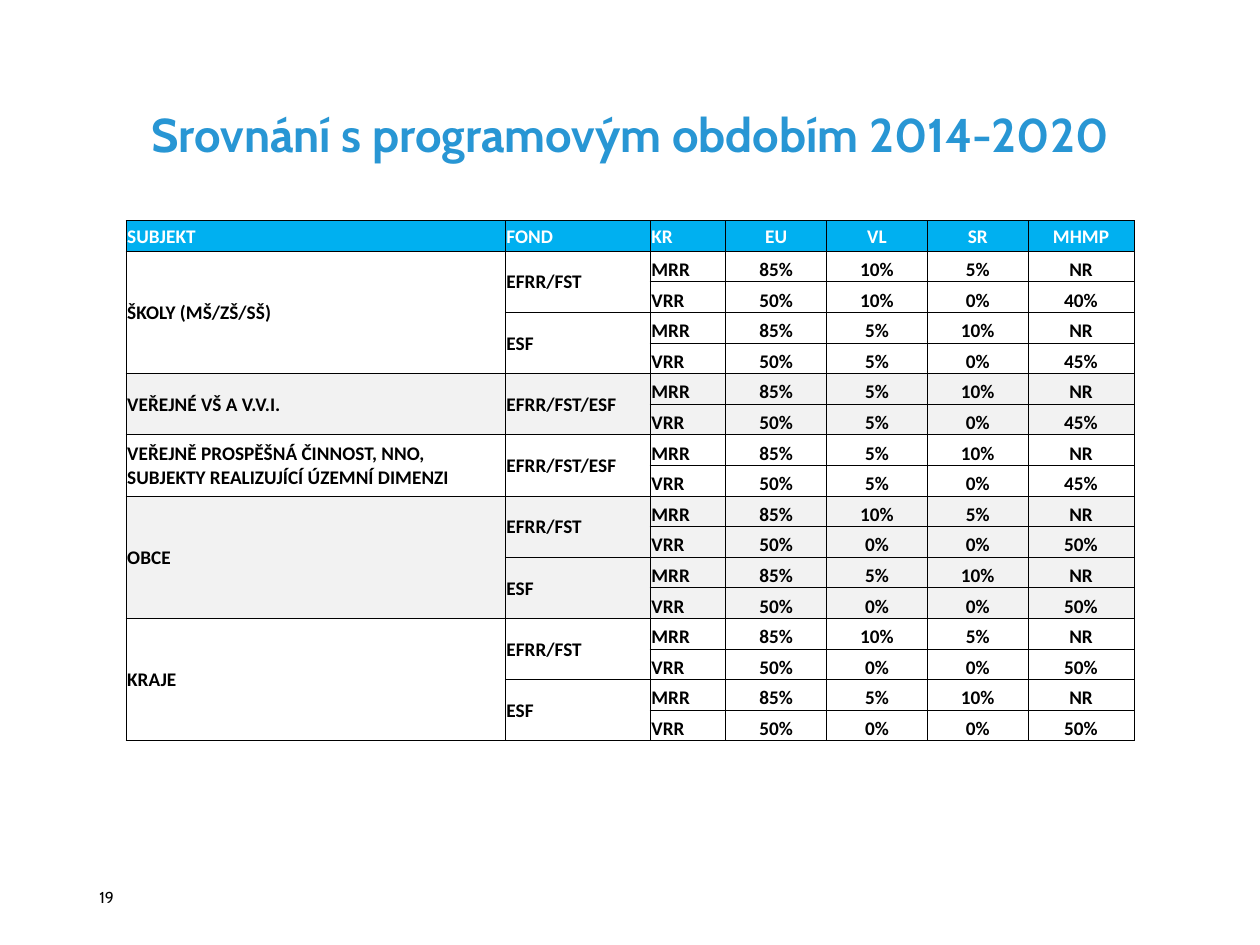
"""Build the slide comparing co-financing rates with the 2014-2020 period."""
from lxml import etree
from pptx import Presentation
from pptx import util as u
from pptx.dml.color import RGBColor
from pptx.enum import text as t
from pptx.oxml.ns import qn


def write(frame, words, align, color, **form):
    para = frame.paragraphs[0]
    para.alignment = align
    run = para.add_run()
    run.text = words
    run.font.color.rgb = RGBColor.from_string(color)
    for key, val in form.items():
        setattr(run.font, key, val)


def border(cell, color, width):
    props = cell._tc.get_or_add_tcPr()
    for spot, side in enumerate(("a:lnL", "a:lnR", "a:lnT", "a:lnB")):
        line = etree.Element(qn(side), w=str(int(width)))
        fill = etree.SubElement(line, qn("a:solidFill"))
        etree.SubElement(fill, qn("a:srgbClr"), val=color)
        props.insert(spot, line)


LEFT, MID = t.PP_ALIGN.LEFT, t.PP_ALIGN.CENTER
HEAD = ["SUBJEKT", "FOND", "KR", "EU", "VL", "SR", "MHMP"]
WIDTHS = [3.01, 1.15, 0.6, 0.8, 0.8, 0.8, 0.84]
GROUPS = [
    ("ŠKOLY (MŠ/ZŠ/SŠ)", "FFFFFF", [
        ("EFRR/FST", "10%", "5%", "10%", "40%"),
        ("ESF", "5%", "10%", "5%", "45%")]),
    ("VEŘEJNÉ VŠ A V.V.I.", "F2F2F2", [
        ("EFRR/FST/ESF", "5%", "10%", "5%", "45%")]),
    ("VEŘEJNĚ PROSPĚŠNÁ ČINNOST, NNO, SUBJEKTY REALIZUJÍCÍ ÚZEMNÍ DIMENZI", "FFFFFF", [
        ("EFRR/FST/ESF", "5%", "10%", "5%", "45%")]),
    ("OBCE", "F2F2F2", [
        ("EFRR/FST", "10%", "5%", "0%", "50%"),
        ("ESF", "5%", "10%", "0%", "50%")]),
    ("KRAJE", "FFFFFF", [
        ("EFRR/FST", "10%", "5%", "0%", "50%"),
        ("ESF", "5%", "10%", "0%", "50%")]),
]

rows, fills, spans = [HEAD], ["00B0F0"], []
for name, fill, funds in GROUPS:
    top = len(rows)
    for fund, more, state, less, city in funds:
        spans.append((len(rows), 1, len(rows) + 1))
        rows.append(["", fund, "MRR", "85%", more, state, "NR"])
        rows.append(["", "", "VRR", "50%", less, "0%", city])
        fills += [fill, fill]
    rows[top][0] = name
    spans.append((top, 0, len(rows) - 1))

deck = Presentation()
deck.slide_width, deck.slide_height = u.Inches(10), u.Inches(7.5)
slide = deck.slides.add_slide(deck.slide_layouts[5])

title = slide.shapes.title
title.left, title.top = u.Inches(0.69), u.Inches(0.4)
title.width, title.height = u.Inches(8.62), u.Inches(1.27)
title.text_frame.vertical_anchor = t.MSO_ANCHOR.MIDDLE
write(title.text_frame, "Srovnání s programovým obdobím 2014-2020", MID, "2896D4",
      name="Cabin", size=u.Pt(27), bold=True)
title.text_frame.paragraphs[0].line_spacing = 1.13

page = slide.shapes.add_textbox(u.Inches(0.69), u.Inches(6.91), u.Inches(0.36), u.Inches(0.43))
page.text_frame.word_wrap = True
page.text_frame.vertical_anchor = t.MSO_ANCHOR.MIDDLE
write(page.text_frame, "19", LEFT, "000000", name="Cabin", size=u.Pt(9))

high = u.Inches(4.13)
table = slide.shapes.add_table(len(rows), len(HEAD), u.Inches(1), u.Inches(1.75),
                               u.Inches(8), high).table
for col, width in zip(table.columns, WIDTHS):
    col.width = u.Inches(width)
for r, row in enumerate(rows):
    table.rows[r].height = high // len(rows)
    for c, words in enumerate(row):
        cell = table.cell(r, c)
        look = {"margin_left": u.Inches(0.01), "margin_right": u.Inches(0.01),
                "margin_top": u.Inches(0.01), "margin_bottom": 0,
                "vertical_anchor": t.MSO_ANCHOR.BOTTOM if r and c > 1 else t.MSO_ANCHOR.MIDDLE}
        for key, val in look.items():
            setattr(cell, key, val)
        cell.fill.solid()
        cell.fill.fore_color.rgb = RGBColor.from_string(fills[r])
        border(cell, "000000", u.Pt(0.5))
        if words:
            write(cell.text_frame, words, MID if c > 2 else LEFT,
                  "000000" if r else "FFFFFF", name="Calibri", size=u.Pt(11), bold=True)
for first, c, last in spans:
    table.cell(first, c).merge(table.cell(last, c))

deck.save("out.pptx")
